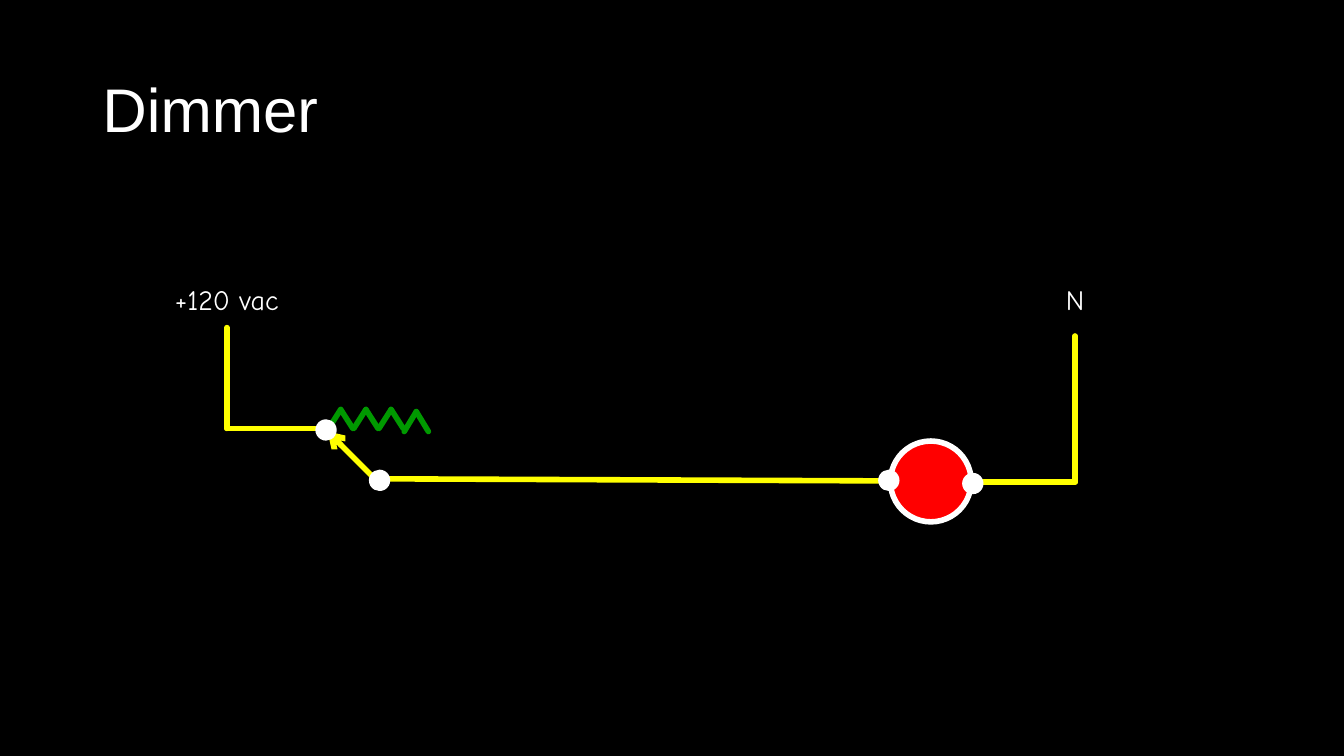
from lxml.etree import SubElement
from pptx import Presentation
from pptx.dml.color import RGBColor
from pptx.enum.shapes import MSO_CONNECTOR as Connector, MSO_SHAPE as Shape
from pptx.enum.text import MSO_ANCHOR as Anchor, MSO_AUTO_SIZE as AutoSize, PP_ALIGN as Align
from pptx.oxml.ns import qn
from pptx.util import Pt

PX = 9525
BLACK, WHITE, YELLOW, GREEN, RED = "000000", "FFFFFF", "FFFF00", "009900", "FF0000"

TITLE = ("Dimmer", (88, 38, 1104, 139))
LABELS = [("+120 vac", (144, 264, 144, 42)), ("N", (952, 264, 144, 42))]
WIPER = (357, 456, 312, 411)
WIRES = [
    (216, 408, 312, 408),
    (360, 456, 837, 458),
    (928, 459, 1024, 459),
    (216, 312, 216, 408),
    (1024, 320, 1024, 459),
]
RESISTOR_LEFT, TOOTH_PITCH, TOOTH_WIDTH = 313, 24, 23
TEETH = [(390, 408), (390, 408), (390, 408), (392, 411)]
LAMP = (848, 420, 77, 77)
TERMINAL_SIZE = 19
TERMINALS = [(301, 400), (837, 448), (917, 451), (352, 448)]


def color(value):
    return RGBColor.from_string(value)


def scaled(box):
    return [round(length * PX) for length in box]


def add_line(slide, ends, line_color, arrow=False):
    connector = slide.shapes.add_connector(Connector.STRAIGHT, *scaled(ends))
    connector.line.color.rgb = color(line_color)
    connector.line.width = Pt(4)
    properties = connector._element.spPr
    SubElement(properties, qn("a:effectLst"))
    outline = properties.find(qn("a:ln"))
    outline.set("cap", "rnd")
    SubElement(outline, qn("a:round"))
    if arrow:
        SubElement(outline, qn("a:tailEnd"), type="arrow")


def add_circle(slide, box, fill_color, line_width):
    circle = slide.shapes.add_shape(Shape.OVAL, *scaled(box))
    circle.shadow.inherit = False
    circle.fill.solid()
    circle.fill.fore_color.rgb = color(fill_color)
    circle.line.color.rgb = color(WHITE)
    circle.line.width = Pt(line_width)


def write(shape, text, font, size, alignment):
    text_frame = shape.text_frame
    text_frame.text = text
    text_frame.word_wrap = True
    paragraph = text_frame.paragraphs[0]
    paragraph.alignment = alignment
    run = paragraph.runs[0]
    run.font.name = font
    run.font.size = Pt(size)
    run.font.color.rgb = color(WHITE)
    return text_frame


def main():
    presentation = Presentation()
    presentation.slide_width, presentation.slide_height = scaled((1280, 720))
    slide = presentation.slides.add_slide(presentation.slide_layouts[5])
    slide.background.fill.solid()
    slide.background.fill.fore_color.rgb = color(BLACK)

    title = slide.shapes.title
    text, box = TITLE
    title.left, title.top, title.width, title.height = scaled(box)
    text_frame = write(title, text, "Arial", 44, Align.LEFT)
    text_frame.vertical_anchor = Anchor.MIDDLE
    text_frame.auto_size = AutoSize.NONE
    text_frame.paragraphs[0].line_spacing = 0.9

    for index, (peak, base) in enumerate(TEETH):
        left = RESISTOR_LEFT + index * TOOTH_PITCH
        middle = left + TOOTH_WIDTH / 2
        for foot in (left, left + TOOTH_WIDTH):
            add_line(slide, (foot, base, middle, peak), GREEN)

    add_line(slide, WIPER, YELLOW, arrow=True)
    for wire in WIRES:
        add_line(slide, wire, YELLOW)

    add_circle(slide, LAMP, RED, 4)
    for left, top in TERMINALS:
        add_circle(slide, (left, top, TERMINAL_SIZE, TERMINAL_SIZE), WHITE, 1)

    for text, box in LABELS:
        label = slide.shapes.add_textbox(*scaled(box))
        write(label, text, "Comic Neue", 20, Align.CENTER).auto_size = AutoSize.SHAPE_TO_FIT_TEXT

    presentation.save("out.pptx")


if __name__ == "__main__":
    main()
